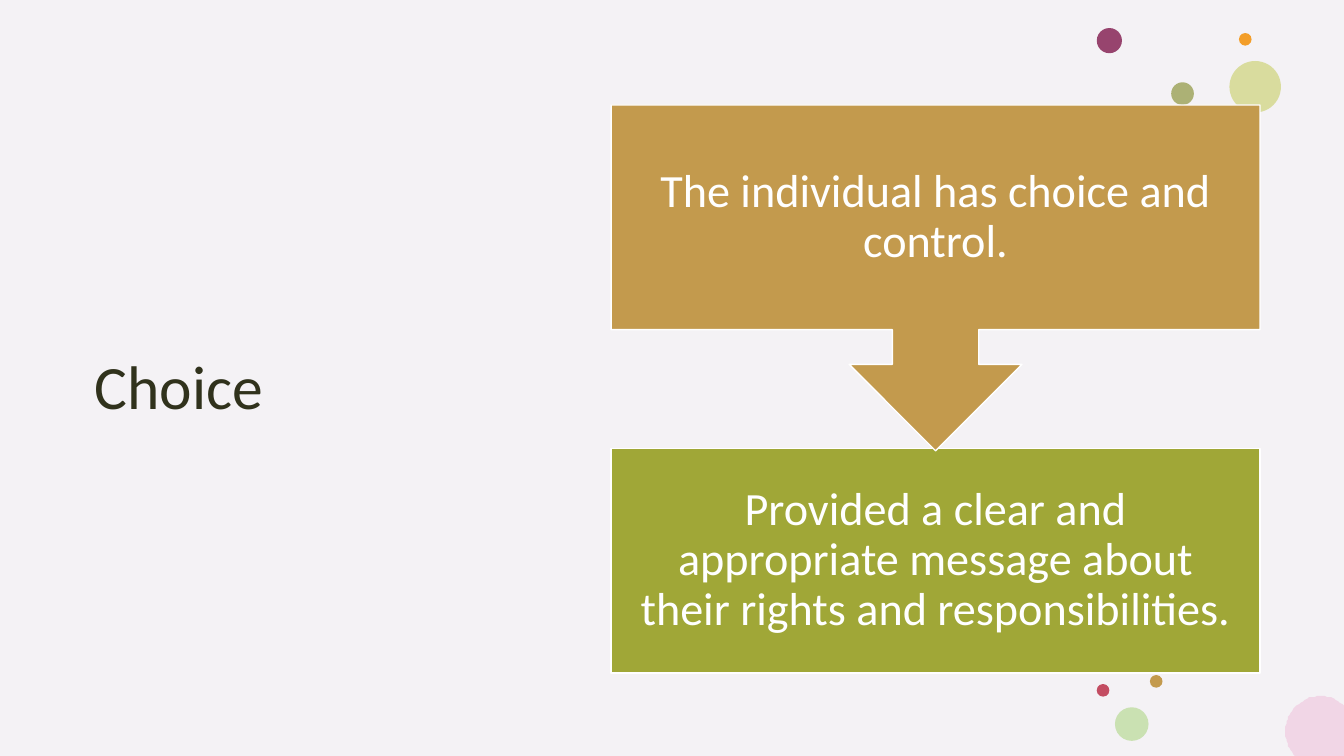
from dataclasses import dataclass
from math import cos, radians, sin

from lxml import etree
from pptx import Presentation
from pptx.dml.color import RGBColor
from pptx.enum import shapes as kinds, text as txt
from pptx.oxml import ns
from pptx.util import Pt

WIDE, HIGH = 960, 540
COLORS = {
    "back": "F4F2F5", "ink": "30321C", "white": "FFFFFF",
    "plum": "97446E", "lime": "CFD47D", "orange": "F39E29",
    "sage": "ACB175", "gold": "C39A4D", "mint": "CAE1B2",
    "red": "C34D62", "pink": "F1D6E6", "olive": "A0A737",
}


@dataclass
class Dot:
    left: float
    top: float
    size: float
    color: str
    alpha: int = 100


@dataclass
class Step:
    kind: kinds.MSO_SHAPE
    top: float
    height: float
    color: str
    words: str


DOTS = [
    Dot(783.4, 20, 18, "plum"),
    Dot(878.2, 43.6, 36.8, "lime", 72),
    Dot(885, 23.6, 9, "orange"),
    Dot(836.6, 58.8, 16.2, "sage"),
    Dot(821.4, 482.2, 9, "gold"),
    Dot(796.4, 505.2, 24, "mint"),
    Dot(783.4, 488.6, 9, "red"),
]
STEPS = [
    Step(kinds.MSO_SHAPE.RECTANGLE, 320.2, 160.6, "olive",
         "Provided a clear and appropriate message about their rights and responsibilities."),
    Step(kinds.MSO_SHAPE.DOWN_ARROW_CALLOUT, 75, 247, "gold",
         "The individual has choice and control."),
]


def shade(name: str) -> RGBColor:
    return RGBColor.from_string(COLORS[name])


def paint(shape, color: str, edge: str = "") -> None:
    shape.shadow.inherit = False
    shape.fill.solid()
    shape.fill.fore_color.rgb = shade(color)
    if edge:
        shape.line.color.rgb = shade(edge)
        shape.line.width = Pt(1)
    else:
        shape.line.fill.background()


def write(shape, words: str, size: float, color: str, align, inset: dict) -> None:
    frame = shape.text_frame
    frame.text = words
    look = {"word_wrap": True, "auto_size": txt.MSO_AUTO_SIZE.NONE,
            "vertical_anchor": txt.MSO_ANCHOR.MIDDLE, **inset}
    for key, value in look.items():
        setattr(frame, key, value)
    para = frame.paragraphs[0]
    para.alignment = align
    para.line_spacing = 0.9
    font = para.runs[0].font
    for key, value in {"name": "Calibri", "size": Pt(size), "bold": False}.items():
        setattr(font, key, value)
    font.color.rgb = shade(color)


def add_dot(slide, dot: Dot) -> None:
    shape = slide.shapes.add_shape(
        kinds.MSO_SHAPE.OVAL, Pt(dot.left), Pt(dot.top), Pt(dot.size), Pt(dot.size))
    paint(shape, dot.color)
    if dot.alpha < 100:
        tint = shape.fill._xPr.find(".//" + ns.qn("a:srgbClr"))
        etree.SubElement(tint, ns.qn("a:alpha"), val=str(dot.alpha * 1000))


def add_corner(slide) -> None:
    mid_x, mid_y, radius = 943.2, 522.4, 25.2
    arc = [(mid_x + radius * cos(radians(turn)), mid_y + radius * sin(radians(turn)))
           for turn in range(136, 313, 4)]
    points = [(min(x, WIDE), min(y, HIGH)) for x, y in arc]
    points += [(WIDE, points[-1][1]), (WIDE, HIGH), (points[0][0], HIGH)]
    pen = slide.shapes.build_freeform(*points[0], scale=Pt(1))
    pen.add_line_segments(points[1:], close=True)
    paint(pen.convert_to_shape(), "pink")


def add_step(slide, step: Step) -> None:
    shape = slide.shapes.add_shape(
        step.kind, Pt(436.5), Pt(step.top), Pt(463.5), Pt(step.height))
    paint(shape, step.color, "white")
    sides = ("left", "top", "right", "bottom")
    inset = {f"margin_{side}": Pt(18.5) for side in sides}
    write(shape, step.words, 33, "white", txt.PP_ALIGN.CENTER, inset)


def main() -> None:
    deck = Presentation()
    deck.slide_width, deck.slide_height = Pt(WIDE), Pt(HIGH)
    slide = deck.slides.add_slide(deck.slide_layouts[5])
    slide.background.fill.solid()
    slide.background.fill.fore_color.rgb = shade("back")
    title = slide.shapes.title
    place = {"left": 60.5, "top": 75, "width": 363, "height": 406}
    for key, value in place.items():
        setattr(title, key, Pt(value))
    write(title, "Choice", 44, "ink", txt.PP_ALIGN.LEFT, {})
    for dot in DOTS:
        add_dot(slide, dot)
    add_corner(slide)
    for step in STEPS:
        add_step(slide, step)
    deck.save("out.pptx")


if __name__ == "__main__":
    main()
